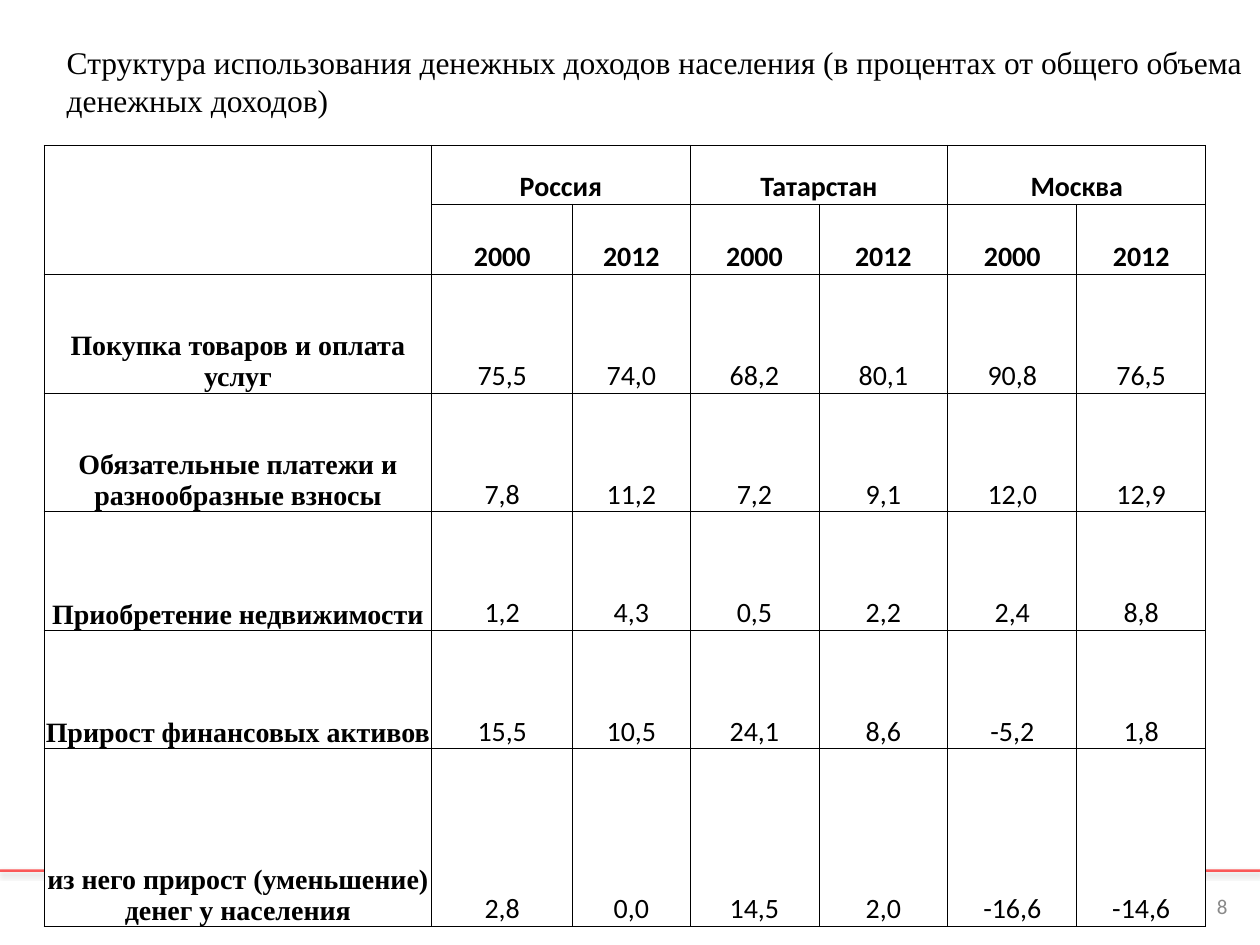
from lxml import etree
from pptx import Presentation
from pptx.dml.color import RGBColor
from pptx.enum.shapes import MSO_CONNECTOR
from pptx.enum.text import MSO_ANCHOR, MSO_AUTO_SIZE, PP_ALIGN
from pptx.oxml import parse_xml
from pptx.oxml.ns import qn
from pptx.util import Pt

BLACK = RGBColor(0x00, 0x00, 0x00)
WHITE = RGBColor(0xFF, 0xFF, 0xFF)
GRAY = RGBColor(0x89, 0x89, 0x89)
RED = RGBColor(0xFF, 0x00, 0x00)
LEFT, CENTER, RIGHT = PP_ALIGN.LEFT, PP_ALIGN.CENTER, PP_ALIGN.RIGHT
TOP, MIDDLE, BOTTOM = MSO_ANCHOR.TOP, MSO_ANCHOR.MIDDLE, MSO_ANCHOR.BOTTOM
GROW = MSO_AUTO_SIZE.SHAPE_TO_FIT_TEXT
STRAIGHT = MSO_CONNECTOR.STRAIGHT
SANS, SERIF = "Calibri", "Times New Roman"
SPACE = 'xmlns:a="http://schemas.openxmlformats.org/drawingml/2006/main"'
SHADOW = (
    f'<a:effectLst {SPACE}><a:outerShdw blurRad="{Pt(3.1)}" dist="{Pt(1.6)}" '
    'dir="5400000" rotWithShape="0"><a:srgbClr val="000000">'
    '<a:alpha val="38000"/></a:srgbClr></a:outerShdw></a:effectLst>'
)
EDGE = (
    '<a:{side} ' + SPACE + ' w="{width}"><a:solidFill><a:srgbClr val="{color}"/>'
    '</a:solidFill><a:prstDash val="solid"/></a:{side}>'
)

REGIONS = ["Россия", "Татарстан", "Москва"]
YEARS = ["2000", "2012"]
USES = [
    ("Покупка товаров и оплата услуг", "75,5 74,0 68,2 80,1 90,8 76,5"),
    ("Обязательные платежи и разнообразные взносы", "7,8 11,2 7,2 9,1 12,0 12,9"),
    ("Приобретение недвижимости", "1,2 4,3 0,5 2,2 2,4 8,8"),
    ("Прирост финансовых активов", "15,5 10,5 24,1 8,6 -5,2 1,8"),
    ("из него прирост (уменьшение) денег у населения", "2,8 0,0 14,5 2,0 -16,6 -14,6"),
]
TITLE = (
    "Структура использования денежных доходов населения "
    "(в процентах от общего объема денежных доходов)"
)
WIDTHS = [221.5, 80.6, 67] + [73.7] * 4
HEIGHTS = [33.8, 40] + [67.8] * 4 + [101.5]


class Deck:
    """Draws styled elements on the current slide."""

    def __init__(self):
        self.show = Presentation()
        self.show.slide_width, self.show.slide_height = Pt(720), Pt(540)
        self.slide = self.show.slides.add_slide(self.show.slide_layouts[6])

    def label(self, frame, text, size, face, color=BLACK, align=LEFT, bold=False):
        para = frame.paragraphs[0]
        para.text, para.alignment = text, align
        font = para.font
        font.size, font.name, font.bold = Pt(size), face, bold
        font.color.rgb = color

    def text(self, box, text, size, face, color=BLACK, align=LEFT, anchor=TOP):
        frame = self.slide.shapes.add_textbox(*map(Pt, box)).text_frame
        frame.word_wrap, frame.vertical_anchor = True, anchor
        self.label(frame, text, size, face, color, align)
        return frame

    def rule(self, left, right, y):
        rule = self.slide.shapes.add_connector(
            STRAIGHT, Pt(left), Pt(y), Pt(right), Pt(y))
        rule.line.color.rgb, rule.line.width = RED, Pt(1.5)
        props = rule._element.spPr
        color = props.find(".//" + qn("a:srgbClr"))
        etree.SubElement(color, qn("a:alpha"), val="64000")
        props.append(parse_xml(SHADOW))

    def cell(self, cell, text="", face=SANS, bold=True):
        cell.fill.solid()
        cell.fill.fore_color.rgb = WHITE
        cell.vertical_anchor = BOTTOM
        cell.margin_left = cell.margin_right = cell.margin_top = Pt(0.7)
        cell.margin_bottom = 0
        self.label(cell.text_frame, text, 16, face, align=CENTER, bold=bold)
        props = cell._tc.get_or_add_tcPr()
        for spot, side in enumerate(("lnL", "lnR", "lnT", "lnB")):
            edge = EDGE.format(side=side, width=Pt(0.5), color=BLACK)
            props.insert(spot, parse_xml(edge))

    def table(self, left, top, rows):
        table = self.slide.shapes.add_table(
            len(rows), len(WIDTHS), Pt(left), Pt(top),
            Pt(sum(WIDTHS)), Pt(sum(HEIGHTS))).table
        table.first_row = table.horz_banding = False
        for col, width in zip(table.columns, WIDTHS):
            col.width = Pt(width)
        for row, height in zip(table.rows, HEIGHTS):
            row.height = Pt(height)
        for r, row in enumerate(rows):
            for c, text in enumerate(row):
                face = SANS if c else SERIF
                self.cell(table.cell(r, c), text, face, r < 2 or c == 0)
        table.cell(0, 0).merge(table.cell(1, 0))
        for c in range(1, len(WIDTHS), len(YEARS)):
            table.cell(0, c).merge(table.cell(0, c + 1))


def main():
    deck = Deck()
    deck.rule(0, 720, 497.5)
    deck.text((671.8, 503.3, 36.7, 28.8), "8", 12, SANS, GRAY, RIGHT, MIDDLE)
    heads = [""]
    for region in REGIONS:
        heads += [region, ""]
    rows = [heads, [""] + YEARS * len(REGIONS)]
    rows += [[name] + values.split() for name, values in USES]
    deck.table(25.2, 83, rows)
    title = deck.text((31, 20.9, 697.7, 51), TITLE, 18, SERIF)
    title.auto_size = GROW
    deck.show.save("out.pptx")


if __name__ == "__main__":
    main()
